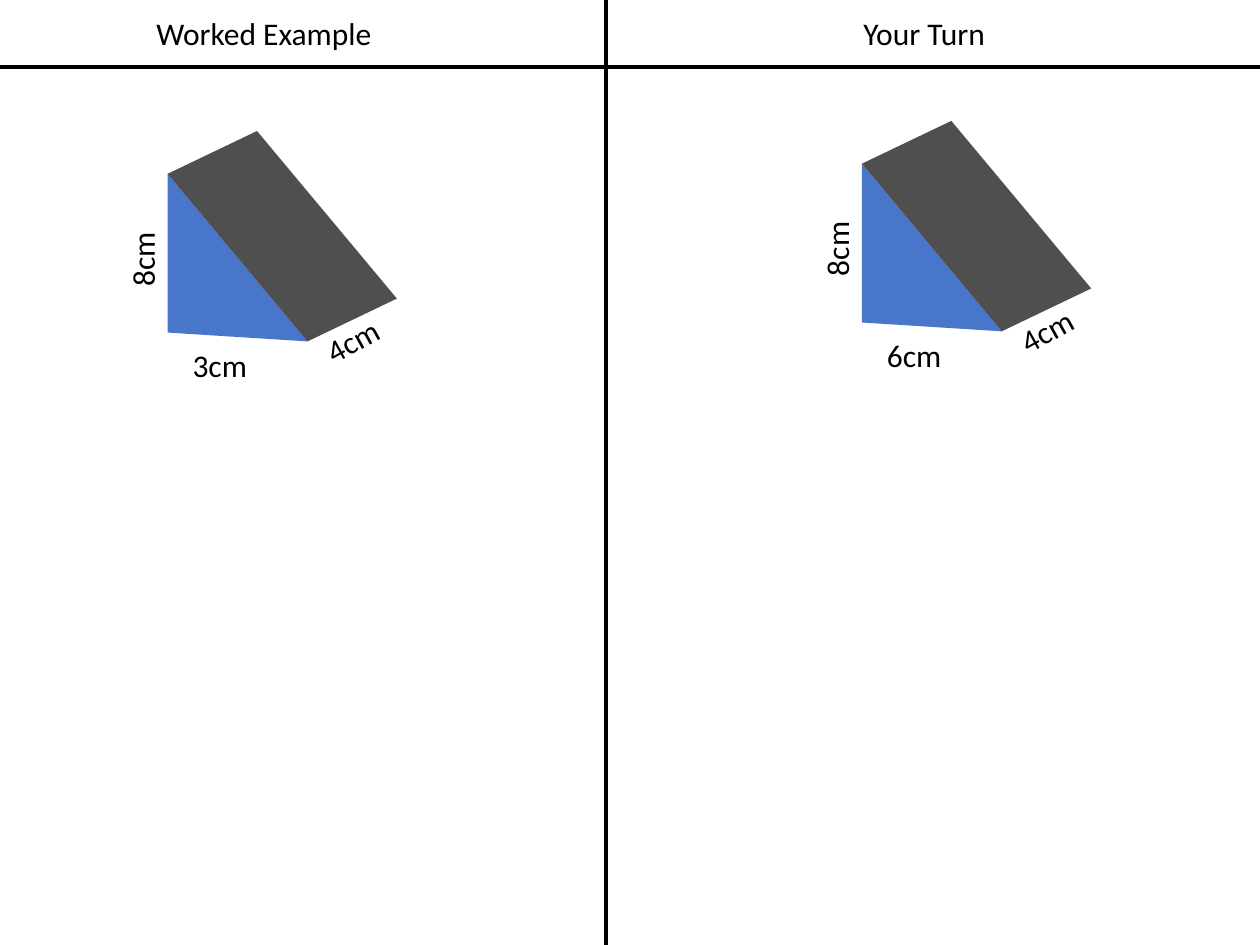
from lxml import etree
from pptx import Presentation
from pptx.dml.color import RGBColor
from pptx.enum.shapes import MSO_CONNECTOR
from pptx.enum.text import MSO_AUTO_SIZE, PP_ALIGN
from pptx.oxml.ns import qn
from pptx.util import Inches, Pt

STRAIGHT = MSO_CONNECTOR.STRAIGHT
CENTER, LEFT = PP_ALIGN.CENTER, PP_ALIGN.LEFT
FIT_TEXT = MSO_AUTO_SIZE.SHAPE_TO_FIT_TEXT

THEME = {
    "font": "Calibri",
    "size": Pt(18),
    "ink": RGBColor(0x00, 0x00, 0x00),
    "front": RGBColor(0x48, 0x76, 0xCA),
    "side": RGBColor(0x4F, 0x4F, 0x4F),
    "rule": Pt(2.5),
}

# Content: heading, heading left, prism offset, base length
WIDTH, HEIGHT = 10, 7.5
PANELS = [
    ("Worked Example", 1.13, (0, 0), "3cm"),
    ("Your Turn", 6.37, (5.51, -0.08), "6cm"),
]
DIVIDERS = [((4.81, 0), (4.81, HEIGHT)), ((0, 0.53), (WIDTH, 0.53))]

# Prism corners in the first panel, and the step from front to back
TOP, CORNER, TIP = (1.33, 1.38), (1.33, 2.64), (2.44, 2.71)
DEPTH = (0.71, -0.34)
HEIGHT_LABEL = ("8cm", (0.81, 1.85), 270)
DEPTH_LABEL = ("4cm", (2.48, 2.5), 330.9)
BASE_LABEL_AT = (1.43, 2.7)


def shift(point, step):
    return point[0] + step[0], point[1] + step[1]


def add_label(slide, text, at, width=0.64, align=LEFT, rotation=0, wrap=False):
    label = slide.shapes.add_textbox(Inches(at[0]), Inches(at[1]), Inches(width), Inches(0.4))
    label.rotation = rotation
    frame = label.text_frame
    frame.word_wrap = wrap
    frame.auto_size = FIT_TEXT
    paragraph = frame.paragraphs[0]
    paragraph.alignment = align
    run = paragraph.add_run()
    run.text = text
    run.font.name = THEME["font"]
    run.font.size = THEME["size"]
    run.font.color.rgb = THEME["ink"]


def add_divider(slide, start, end):
    divider = slide.shapes.add_connector(STRAIGHT, *map(Inches, start + end))
    divider.line.color.rgb = THEME["ink"]
    divider.line.width = THEME["rule"]
    etree.SubElement(divider.line._get_or_add_ln().getparent(), qn("a:effectLst"))


def add_face(slide, corners, color):
    first, *rest = [(Inches(x), Inches(y)) for x, y in corners]
    builder = slide.shapes.build_freeform(*first)
    builder.add_line_segments(rest, close=True)
    face = builder.convert_to_shape()
    face.shadow.inherit = False
    face.fill.solid()
    face.fill.fore_color.rgb = color
    face.line.fill.background()


def add_prism(slide, offset, base):
    top, corner, tip = (shift(point, offset) for point in (TOP, CORNER, TIP))
    add_face(slide, [top, corner, tip], THEME["front"])
    add_face(slide, [top, shift(top, DEPTH), shift(tip, DEPTH), tip], THEME["side"])
    for text, at, rotation in [(base, BASE_LABEL_AT, 0), HEIGHT_LABEL, DEPTH_LABEL]:
        add_label(slide, text, shift(at, offset), rotation=rotation)


def main():
    deck = Presentation()
    deck.slide_width, deck.slide_height = Inches(WIDTH), Inches(HEIGHT)
    slide = deck.slides.add_slide(deck.slide_layouts[6])

    # Headings
    for heading, left, _, _ in PANELS:
        add_label(slide, heading, (left, 0.06), width=1.93, align=CENTER, wrap=True)

    # Panel dividers
    for start, end in DIVIDERS:
        add_divider(slide, start, end)

    # Prisms with their measurements
    for _, _, offset, base in PANELS:
        add_prism(slide, offset, base)

    deck.save("out.pptx")


if __name__ == "__main__":
    main()
